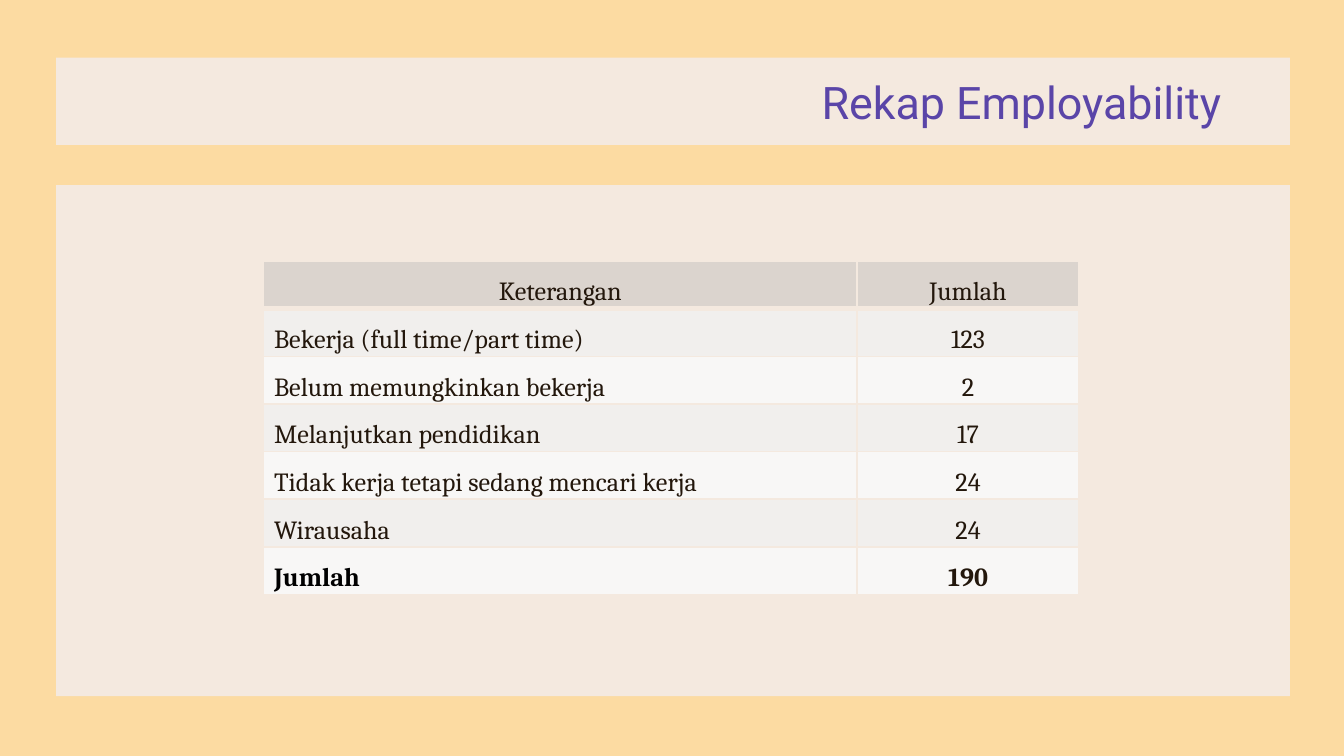
from lxml.etree import SubElement
from pptx import Presentation
from pptx.dml.color import RGBColor
from pptx.enum.shapes import MSO_SHAPE as SHAPE
from pptx.enum.text import MSO_ANCHOR as ANCHOR, PP_ALIGN as ALIGN
from pptx.oxml.ns import qn
from pptx.util import Cm, Pt

# Content
TITLE = "Rekap Employability "
ROWS = [
    ("Keterangan", "Jumlah"),
    ("Bekerja (full time/part time)", "123"),
    ("Belum memungkinkan bekerja", "2"),
    ("Melanjutkan pendidikan", "17"),
    ("Tidak kerja tetapi sedang mencari kerja", "24"),
    ("Wirausaha", "24"),
    ("Jumlah", "190"),
]

# Style and layout, lengths in cm
BACKGROUND, PANEL = "FCDBA2", "F4E9DF"
PURPLE, BROWN, BLACK = "5A45A8", "23170C", "000000"
HEADER, BANDS = "DBD4CE", ("F8F7F6", "F1EFED")
PANEL_LEFT, PANEL_WIDTH = 1.06, 23.32
PANELS = [(1.09, 1.65), (3.5, 9.65)]  # top, height
COL_WIDTHS, ROW_HEIGHT = (11.22, 4.19), 0.9


def color(hex_code):
    return RGBColor.from_string(hex_code)


def paint(fill, hex_code):
    fill.solid()
    fill.fore_color.rgb = color(hex_code)


def add_run(p, text, font, size, hex_code, bold=False):
    r = p.add_run()
    r.text = text
    r.font.name, r.font.size, r.font.bold = font, Pt(size), bold
    r.font.color.rgb = color(hex_code)


def set_borders(cell, widths):
    tc_pr = cell._tc.get_or_add_tcPr()
    for i, (side, width) in enumerate(widths.items()):
        ln = SubElement(tc_pr, qn(f"a:ln{side}"), w=str(Pt(width)))
        fill = SubElement(ln, qn("a:solidFill"))
        SubElement(fill, qn("a:srgbClr"), val=PANEL)
        tc_pr.insert(i, ln)  # borders come before the fill


prs = Presentation()
prs.slide_width, prs.slide_height = Cm(25.4), Cm(14.28)
s = prs.slides.add_slide(prs.slide_layouts[5])
paint(s.background.fill, BACKGROUND)

# Panels, placed behind the title
title = s.shapes.title
for top, height in PANELS:
    sp = s.shapes.add_shape(SHAPE.RECTANGLE, Cm(PANEL_LEFT), Cm(top),
                            Cm(PANEL_WIDTH), Cm(height))
    sp.shadow.inherit = False
    paint(sp.fill, PANEL)
    sp.line.fill.background()
    title._element.addprevious(sp._element)

# Title
title.left, title.top = Cm(1.52), Cm(PANELS[0][0])
title.width, title.height = Cm(22.02), Cm(PANELS[0][1])
tf = title.text_frame
tf.word_wrap = True
tf.vertical_anchor = ANCHOR.MIDDLE
tf.margin_left = tf.margin_right = tf.margin_top = tf.margin_bottom = Cm(0.25)
p = tf.paragraphs[0]
p.alignment = ALIGN.RIGHT
add_run(p, TITLE, "Roboto", 24, PURPLE)

# Table
table = s.shapes.add_table(len(ROWS), len(COL_WIDTHS), Cm(4.98), Cm(4.93),
                           Cm(sum(COL_WIDTHS)), Cm(ROW_HEIGHT * len(ROWS))).table
table.first_row = table.horz_banding = False
for col, width in zip(table.columns, COL_WIDTHS):
    col.width = Cm(width)
for i, row in enumerate(ROWS):
    table.rows[i].height = Cm(ROW_HEIGHT)
    is_header, is_total = i == 0, i == len(ROWS) - 1
    for j, text in enumerate(row):
        is_label = j == 0 and not is_header
        cell = table.cell(i, j)
        cell.vertical_anchor = ANCHOR.MIDDLE
        cell.margin_right = cell.margin_top = cell.margin_bottom = 0
        cell.margin_left = Cm(0.2 if is_label else 0)
        paint(cell.fill, HEADER if is_header else BANDS[i % 2])
        set_borders(cell, {"L": 1, "R": 1, "T": 3 if i == 1 else 1,
                           "B": 3 if is_header else 1})
        p = cell.text_frame.paragraphs[0]
        p.alignment = ALIGN.LEFT if is_label else ALIGN.CENTER
        p.line_spacing = 1.5
        add_run(p, text, "Cambria", 14,
                BLACK if is_total and is_label else BROWN, is_total)

prs.save("out.pptx")
